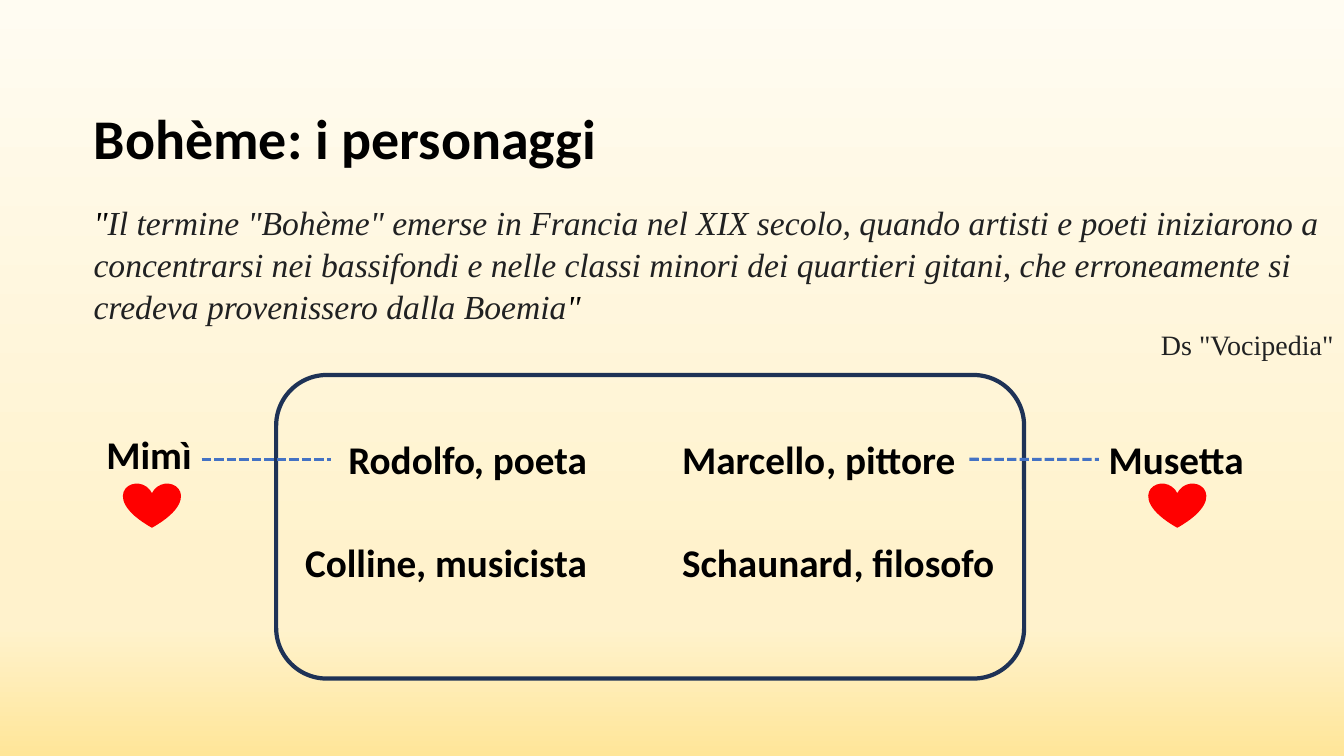
from dataclasses import dataclass

from lxml.etree import SubElement
from pptx import Presentation
from pptx.dml.color import RGBColor as Rgb
from pptx.enum.dml import MSO_LINE as Dash
from pptx.enum.shapes import MSO_CONNECTOR as Link, MSO_SHAPE as Shape
from pptx.enum.text import MSO_ANCHOR as Anchor, MSO_AUTO_SIZE as Fit, PP_ALIGN as Align
from pptx.oxml.ns import qn
from pptx.util import Cm, Pt

TITLE = "Bohème: i personaggi"
QUOTE = (
    'Il termine "Bohème" emerse in Francia nel XIX secolo, quando artisti e poeti '
    "iniziarono a concentrarsi nei bassifondi e nelle classi minori dei quartieri "
    "gitani, che erroneamente si credeva provenissero dalla Boemia"
)
CREDIT = 'Ds "Vocipedia"'

ROW_TOPS = (10.85, 13.44)
ROW_HEIGHT = 1.45
LINK_Y = ROW_TOPS[0] + ROW_HEIGHT / 2
LEFT_COLUMN_END = 15.04
RIGHT_COLUMN_START = 16.94
LEFT_FRIENDS = (("Rodolfo", 8.53, ", poeta", 3.4), ("Colline", 7.44, ", musicista", 4.95))
RIGHT_FRIENDS = (("Marcello", ", pittore", 20.57), ("Schaunard", ", filosofo", 21.26))
NAME_WIDTH = 5.2
HEART_LEFTS = (3.12, 28.96)


@dataclass(frozen=True)
class Theme:
    """Colours, fonts and type sizes of the slide."""

    sans: str = "Calibri"
    serif: str = "Times New Roman"
    ink: str = "000000"
    prose: str = "202122"
    frame: str = "1E3256"
    link: str = "4472C4"
    heart: str = "FF0000"
    backdrop: tuple = ((0, "FFFCF2"), (74, "FFF2CC"), (83, "FFF2CC"), (100, "FFE699"))
    title: int = 40
    name: int = 28
    quote: int = 24
    credit: int = 20


THEME = Theme()


def add_span(para, text, size, font, color, bold=False, italic=False):
    """Append one formatted run."""
    span = para.add_run()
    span.text = text
    span.font.size = Pt(size)
    span.font.name = font
    span.font.color.rgb = Rgb.from_string(color)
    span.font.bold = bold
    span.font.italic = italic


def place(box, left, top, width, height):
    """Set the position and size of a box in centimetres."""
    box.left, box.top, box.width, box.height = map(Cm, (left, top, width, height))


def prepare(box):
    """Make a text box wrap from its top and return its first paragraph."""
    frame = box.text_frame
    frame.word_wrap = True
    frame.auto_size = Fit.NONE
    frame.vertical_anchor = Anchor.TOP
    return frame.paragraphs[0]


def add_label(page, text, left, top, width=NAME_WIDTH, align=Align.LEFT):
    """Add a bold name or role."""
    box = page.shapes.add_textbox(*map(Cm, (left, top, width, ROW_HEIGHT)))
    para = prepare(box)
    para.alignment = align
    add_span(para, text, THEME.name, THEME.sans, THEME.ink, bold=True)
    return box


def add_link(page, start, end):
    """Add a level dashed line between two horizontal positions."""
    link = page.shapes.add_connector(Link.STRAIGHT, Cm(start), Cm(LINK_Y), Cm(end), Cm(LINK_Y))
    link.line.color.rgb = Rgb.from_string(THEME.link)
    link.line.width = Pt(2.25)
    link.line.dash_style = Dash.SQUARE_DOT
    SubElement(link.element.spPr, qn("a:effectLst"))
    return link


def add_outline(page, kind, bounds, color, weight):
    """Add an unfilled preset shape with a coloured outline."""
    shape = page.shapes.add_shape(kind, *map(Cm, bounds))
    shape.shadow.inherit = False
    shape.fill.background()
    shape.line.color.rgb = Rgb.from_string(color)
    shape.line.width = Pt(weight)
    return shape


def paint_background(page):
    """Fill the background with the vertical gradient."""
    fill = page.background.fill
    fill.gradient()
    fill.gradient_angle = 270
    stops = next(page.element.iter(qn("a:gsLst")))
    for stop in list(stops):
        stops.remove(stop)
    for percent, color in THEME.backdrop:
        stop = SubElement(stops, qn("a:gs"), pos=str(percent * 1000))
        SubElement(stop, qn("a:srgbClr"), val=color)


def add_title(page):
    """Write the title into its placeholder."""
    box = page.shapes.title
    place(box, 2.11, 2.49, 28.7, 1.96)
    para = prepare(box)
    para.alignment = Align.LEFT
    add_span(para, TITLE, THEME.title, THEME.sans, THEME.ink, bold=True)


def add_quote(page):
    """Write the quotation and its credit."""
    box = page.shapes.add_textbox(*map(Cm, (2.11, 4.93, 31.75, 3.18)))
    para = prepare(box)
    para.line_spacing = 1.04
    for text, color in (('"', THEME.ink), (QUOTE, THEME.prose), ('"', THEME.ink)):
        add_span(para, text, THEME.quote, THEME.serif, color, italic=True)
    credit = box.text_frame.add_paragraph()
    credit.alignment = Align.RIGHT
    credit.line_spacing = 1.04
    add_span(credit, CREDIT, THEME.credit, THEME.serif, THEME.prose)


def add_characters(page):
    """Place the four friends, their two loves and the links."""
    add_outline(page, Shape.ROUNDED_RECTANGLE, (6.96, 9.45, 18.85, 7.65), THEME.frame, 3)
    for top, (name, left, role, width) in zip(ROW_TOPS, LEFT_FRIENDS):
        add_label(page, name, left, top)
        add_label(page, role, LEFT_COLUMN_END - width, top, width, Align.RIGHT)
    for top, (name, role, left) in zip(ROW_TOPS, RIGHT_FRIENDS):
        add_label(page, name, RIGHT_COLUMN_START, top)
        add_label(page, role, left, top)
    add_label(page, "Mimì", -1.73, 10.72, 6.81, Align.RIGHT)
    musetta = add_label(page, "Musetta", 27.69, ROW_TOPS[0], 4.1)
    add_link(page, 5.08, 8.33)
    add_link(page, 24.43, 27.69).end_connect(musetta, 1)
    for left in HEART_LEFTS:
        heart = add_outline(page, Shape.HEART, (left, 12.19, 1.42, 1.09), THEME.heart, 1)
        heart.fill.solid()
        heart.fill.fore_color.rgb = Rgb.from_string(THEME.heart)


def main():
    """Build and save the slide."""
    deck = Presentation()
    deck.slide_width, deck.slide_height = Cm(33.87), Cm(19.05)
    page = deck.slides.add_slide(deck.slide_layouts.get_by_name("Title Only"))
    paint_background(page)
    add_title(page)
    add_characters(page)
    add_quote(page)
    deck.save("out.pptx")


if __name__ == "__main__":
    main()
